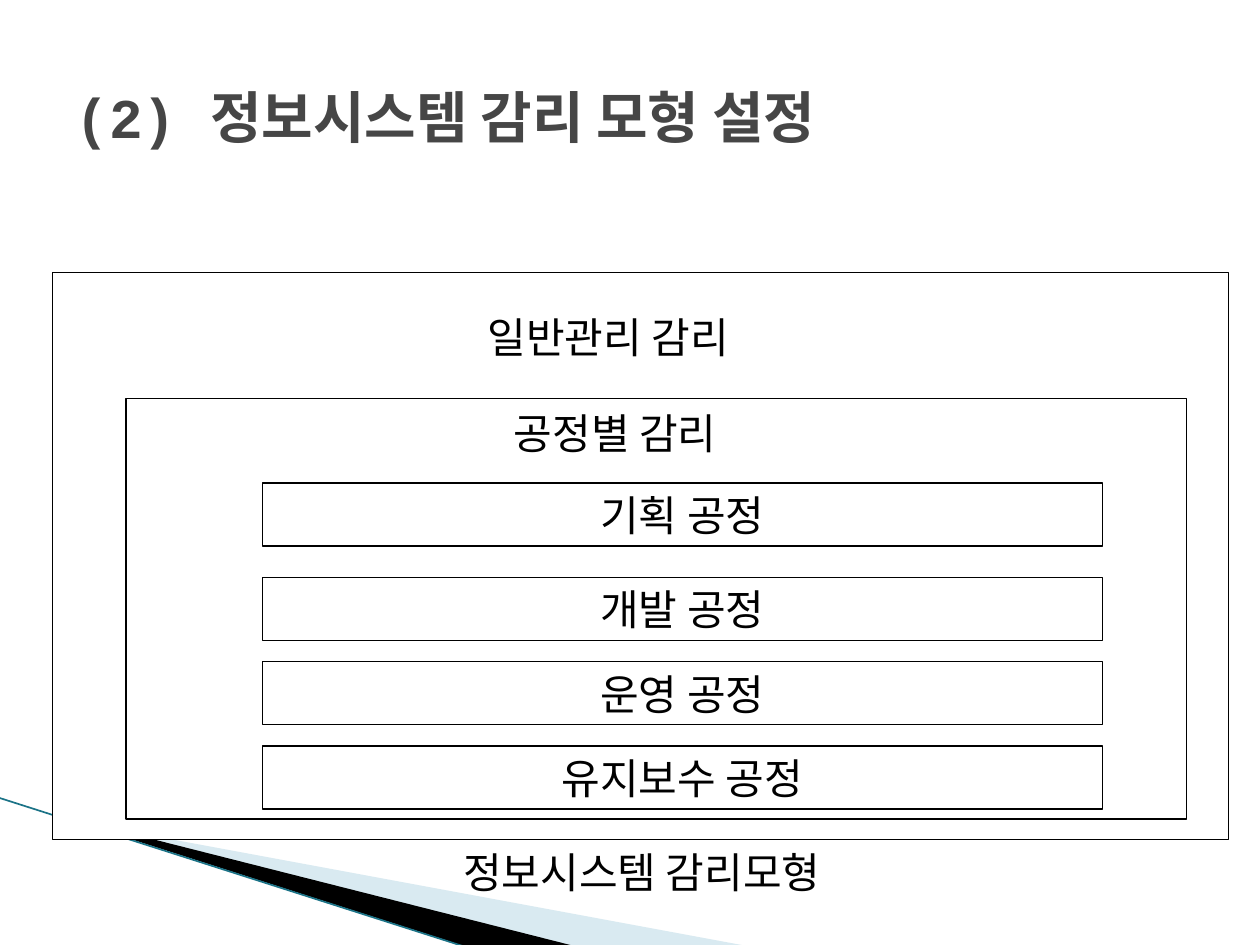
from typing import NamedTuple

from lxml import etree
from pptx import Presentation
from pptx import util as u
from pptx.dml.color import RGBColor
from pptx.enum import shapes, text
from pptx.oxml.ns import qn

COLORS = {
    "ink": "000000",
    "paper": "FFFFFF",
    "title": "464646",
    "wedge": "A0CBDC",
    "edge": "1B7387",
}
KOREAN = "Noto Sans CJK KR"
LABEL_FORMAT = {"name": KOREAN, "size": u.Pt(24)}
TITLE_FORMAT = {"name": "Courier New", "size": u.Pt(32), "bold": True}


class Frame(NamedTuple):
    """Position and size in centimetres."""
    left: float
    top: float
    width: float
    height: float

    def lengths(self) -> list:
        return [u.Cm(value) for value in self]


class Label(NamedTuple):
    wording: str
    frame: Frame


class Wedge(NamedTuple):
    color: str
    points: list
    opacity: int


WEDGES = [
    Wedge("wedge", [(1.4, 16.54), (15.11, 19.08), (11.58, 19.08), (1.4, 16.51)], 40),
    Wedge("ink", [(1.35, 16.48), (11.61, 19.08), (9.45, 19.1), (1.37, 16.51)], 100),
]
AUDIT_FRAMES = [Frame(1.06, 5.5, 23.71, 11.43), Frame(2.54, 8.04, 21.38, 8.47)]
PROCESS_TOPS = [9.74] + [11.64 + 1.7 * row for row in range(3)]
PROCESSES = [
    Label(wording, Frame(5.29, top, 16.93, 1.27))
    for wording, top in zip(["기획 공정", "개발 공정", "운영 공정", "유지보수 공정"], PROCESS_TOPS)
]
CAPTIONS = [
    Label("일반관리 감리", Frame(9.58, 6.15, 5.87, 1.27)),
    Label("공정별 감리", Frame(10.11, 8.1, 5.03, 1.27)),
    Label("정보시스템 감리모형", Frame(9.09, 16.94, 8.41, 1.27)),
]


def rgb(name: str) -> RGBColor:
    return RGBColor.from_string(COLORS[name])


def write(text_frame, wording: str, font_format: dict, color: str, align) -> None:
    paragraph = text_frame.paragraphs[0]
    paragraph.alignment = align
    run = paragraph.add_run()
    run.text = wording
    for attribute, value in font_format.items():
        setattr(run.font, attribute, value)
    run.font.color.rgb = rgb(color)
    east_asian = etree.SubElement(run.font._element, qn("a:ea"))
    east_asian.set("typeface", KOREAN)


def draw_wedge(slide, wedge: Wedge) -> None:
    points = [(u.Cm(x), u.Cm(y)) for x, y in wedge.points]
    builder = slide.shapes.build_freeform(*points[0])
    builder.add_line_segments(points[1:], close=True)
    shape = builder.convert_to_shape()
    shape.shadow.inherit = False
    shape.fill.solid()
    shape.fill.fore_color.rgb = rgb(wedge.color)
    shape.line.fill.background()
    if wedge.opacity < 100:
        color = shape._element.spPr.find(qn("a:solidFill"))[0]
        etree.SubElement(color, qn("a:alpha")).set("val", str(wedge.opacity * 1000))


def draw_edge(slide) -> None:
    ends = [u.Cm(value) for value in (-0.03, 16.08, 9.42, 19.1)]
    edge = slide.shapes.add_connector(shapes.MSO_CONNECTOR.STRAIGHT, *ends)
    edge.line.color.rgb = rgb("edge")
    edge.line.width = u.Pt(0.95)
    etree.SubElement(edge._element.spPr, qn("a:effectLst"))


def draw_box(slide, frame: Frame):
    box = slide.shapes.add_shape(shapes.MSO_SHAPE.RECTANGLE, *frame.lengths())
    box.shadow.inherit = False
    box.fill.solid()
    box.fill.fore_color.rgb = rgb("paper")
    box.line.color.rgb = rgb("ink")
    box.line.width = u.Pt(0.75)
    return box


def draw_process(slide, process: Label) -> None:
    text_frame = draw_box(slide, process.frame).text_frame
    text_frame.word_wrap = False
    text_frame.vertical_anchor = text.MSO_ANCHOR.MIDDLE
    write(text_frame, process.wording, LABEL_FORMAT, "ink", text.PP_ALIGN.CENTER)


def draw_caption(slide, caption: Label) -> None:
    text_frame = slide.shapes.add_textbox(*caption.frame.lengths()).text_frame
    text_frame.word_wrap = False
    text_frame.auto_size = text.MSO_AUTO_SIZE.SHAPE_TO_FIT_TEXT
    write(text_frame, caption.wording, LABEL_FORMAT, "ink", text.PP_ALIGN.LEFT)


def main() -> None:
    deck = Presentation()
    deck.slide_width, deck.slide_height = u.Cm(25.4), u.Cm(19.05)
    slide = deck.slides.add_slide(deck.slide_layouts[5])

    # Corner decoration
    for wedge in WEDGES:
        draw_wedge(slide, wedge)
    draw_edge(slide)

    # Title
    title = slide.shapes.title
    title.left, title.top, title.width, title.height = Frame(1.27, 0.76, 22.86, 3.18).lengths()
    title.text_frame.vertical_anchor = text.MSO_ANCHOR.MIDDLE
    write(title.text_frame, "(2) 정보시스템 감리 모형 설정", TITLE_FORMAT, "title", text.PP_ALIGN.LEFT)

    # Nested audit model
    for frame in AUDIT_FRAMES:
        draw_box(slide, frame)
    for process in PROCESSES:
        draw_process(slide, process)
    for caption in CAPTIONS:
        draw_caption(slide, caption)

    deck.save("out.pptx")


if __name__ == "__main__":
    main()
